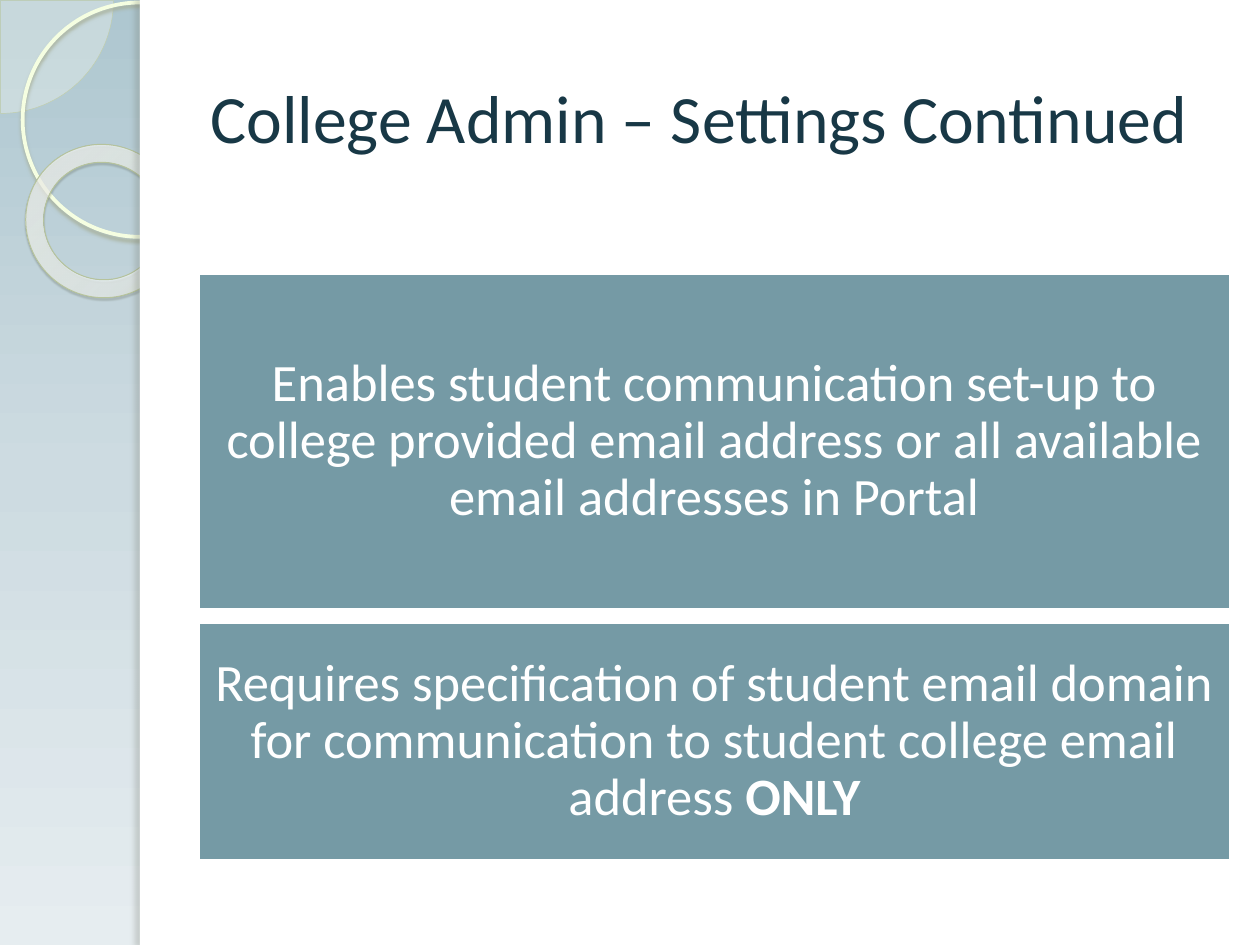
from dataclasses import dataclass
from typing import Optional

from lxml import etree
from pptx import Presentation
from pptx import util as u
from pptx.dml.color import RGBColor
from pptx.enum import shapes, text
from pptx.oxml.ns import qn

FONT = "Calibri"
COLORS = {
    "title": "183846", "panel": "759AA5", "white": "FFFFFF",
    "leaf": "FAFDF5", "leaf_line": "C2CEA9", "ring": "F5FEE1",
    "donut_line": "B6C39C",
}
SKY = [(0, "AEC7D0", 100), (50, "CDDBE1", 100), (100, "E6EDF0", 100)]
GLASS = [(0, "FCFEF7", 70), (70, "FEFFFB", 55), (100, "CEE59D", 60)]
GLASS_FOCUS = {"l": -408, "t": -50, "r": 508, "b": 150}
KIND = shapes.MSO_SHAPE


@dataclass
class Shadow:
    color: str
    alpha: float
    blur: float
    distance: float
    angle: float


@dataclass
class Decor:
    kind: KIND
    box: tuple
    fill: Optional[str] = None
    alpha: float = 100
    line: Optional[str] = None
    weight: float = 0
    shadow: Optional[Shadow] = None
    adjust: tuple = ()
    rotation: float = 0


@dataclass
class Panel:
    top: float
    height: float
    spans: list


LEAF = Decor(KIND.PIE, (-0.89, -0.89, 1.79, 1.79), COLORS["leaf"], 33,
             COLORS["leaf_line"], 0.25, adjust=(0, 54))
RING = Decor(KIND.OVAL, (0.18, 0.02, 1.86, 1.86), line=COLORS["ring"], weight=2.15,
             shadow=Shadow("A6AE96", 85, 2, 2, 90))
DONUT = Decor(KIND.DONUT, (0.2, 1.15, 1.23, 1.21), COLORS["leaf"],
              line=COLORS["donut_line"], weight=0.58,
              shadow=Shadow("535948", 35, 1, 1.2, 75), adjust=(0.118,), rotation=38.6)
SHEET = Decor(KIND.RECTANGLE, (1.11, 0, 8.89, 7.5), COLORS["white"])
EDGE = Decor(KIND.RECTANGLE, (1.11, 0, 0.08, 7.5), COLORS["white"],
             shadow=Shadow("6F7367", 25, 3, 3, 180))

PANELS = [
    Panel(2.17, 2.67, [
        ("Enables student communication set-up to college provided email address "
         "or all available email addresses in Portal", False)]),
    Panel(4.94, 1.89, [
        ("Requires specification of student email domain for communication "
         "to student college email address ", False),
        ("ONLY", True)]),
]


def rgb(color: str) -> RGBColor:
    return RGBColor.from_string(color)


def add_node(parent, tag: str, **values):
    return etree.SubElement(parent, qn(tag), {k: str(v) for k, v in values.items()})


def per_mille(percent: float) -> int:
    """Percent in the thousandths that DrawingML counts in."""
    return round(percent * 1000)


def set_gradient(properties, stops: list, focus: Optional[dict] = None) -> None:
    """Turn a solid fill into a downward or, with a focus, circular gradient."""
    solid = properties.find(qn("a:solidFill"))
    gradient = etree.Element(qn("a:gradFill"), rotWithShape="1")
    properties.replace(solid, gradient)
    stop_list = add_node(gradient, "a:gsLst")
    for position, color, alpha in stops:
        stop = add_node(stop_list, "a:gs", pos=per_mille(position))
        add_node(add_node(stop, "a:srgbClr", val=color), "a:alpha", val=per_mille(alpha))
    if focus:
        circle = add_node(gradient, "a:path", path="circle")
        add_node(circle, "a:fillToRect", **{k: per_mille(v) for k, v in focus.items()})
    else:
        add_node(gradient, "a:lin", ang=90 * 60000, scaled=0)


def add_shadow(shape, shadow: Shadow) -> None:
    effects = shape._element.spPr.find(qn("a:effectLst"))
    outer = add_node(effects, "a:outerShdw", blurRad=u.Pt(shadow.blur),
                     dist=u.Pt(shadow.distance), dir=round(shadow.angle * 60000),
                     algn="ctr", rotWithShape=0)
    color = add_node(outer, "a:srgbClr", val=shadow.color)
    add_node(color, "a:alpha", val=per_mille(shadow.alpha))


def draw_decor(page, decor: Decor):
    shape = page.shapes.add_shape(decor.kind, *map(u.Inches, decor.box))
    shape.rotation = decor.rotation
    for index, value in enumerate(decor.adjust):
        shape.adjustments[index] = value
    if decor.fill:
        shape.fill.solid()
        shape.fill.fore_color.rgb = rgb(decor.fill)
        color = shape._element.spPr.find(qn("a:solidFill"))[0]
        add_node(color, "a:alpha", val=per_mille(decor.alpha))
    else:
        shape.fill.background()
    if decor.line:
        shape.line.color.rgb = rgb(decor.line)
        shape.line.width = u.Pt(decor.weight)
    else:
        shape.line.fill.background()
    shape.shadow.inherit = False
    if decor.shadow:
        add_shadow(shape, decor.shadow)
    return shape


def add_span(para, words: str, size: float, color: str, bold: bool = False) -> None:
    span = para.add_run()
    span.text = words
    span.font.name = FONT
    span.font.size = u.Pt(size)
    span.font.bold = bold
    span.font.color.rgb = rgb(color)


def draw_panel(page, panel: Panel) -> None:
    shape = draw_decor(page, Decor(KIND.RECTANGLE, (1.57, panel.top, 8.2, panel.height),
                                   COLORS["panel"], line=COLORS["white"], weight=2))
    frame = shape.text_frame
    frame.word_wrap = True
    frame.vertical_anchor = text.MSO_ANCHOR.MIDDLE
    frame.margin_left = frame.margin_right = u.Inches(0.08)
    frame.margin_top = frame.margin_bottom = u.Inches(0.08)
    para = frame.paragraphs[0]
    para.alignment = text.PP_ALIGN.CENTER
    para.line_spacing = 0.9
    for words, bold in panel.spans:
        add_span(para, words, 30, COLORS["white"], bold)


def place_title(page, words: str) -> None:
    title = page.shapes.title
    title.left, title.top = u.Inches(1.57), u.Inches(0.3)
    title.width, title.height = u.Inches(8.2), u.Inches(1.25)
    frame = title.text_frame
    frame.auto_size = text.MSO_AUTO_SIZE.NONE
    frame.vertical_anchor = text.MSO_ANCHOR.MIDDLE
    para = frame.paragraphs[0]
    para.alignment = text.PP_ALIGN.LEFT
    add_span(para, words, 38.7, COLORS["title"])
    page.shapes._spTree.append(title._element)  # in front of the white sheet


def main() -> None:
    deck = Presentation()
    deck.slide_width, deck.slide_height = u.Inches(10), u.Inches(7.5)
    page = deck.slides.add_slide(deck.slide_layouts[5])
    backdrop = page.background.fill
    backdrop.solid()
    backdrop.fore_color.rgb = rgb(SKY[0][1])
    set_gradient(page._element.find(".//" + qn("p:bgPr")), SKY)

    draw_decor(page, LEAF)
    draw_decor(page, RING)
    donut = draw_decor(page, DONUT)
    set_gradient(donut._element.spPr, GLASS, GLASS_FOCUS)
    draw_decor(page, SHEET)
    draw_decor(page, EDGE)
    place_title(page, "College Admin – Settings Continued")
    for panel in PANELS:
        draw_panel(page, panel)
    deck.save("out.pptx")


if __name__ == "__main__":
    main()
